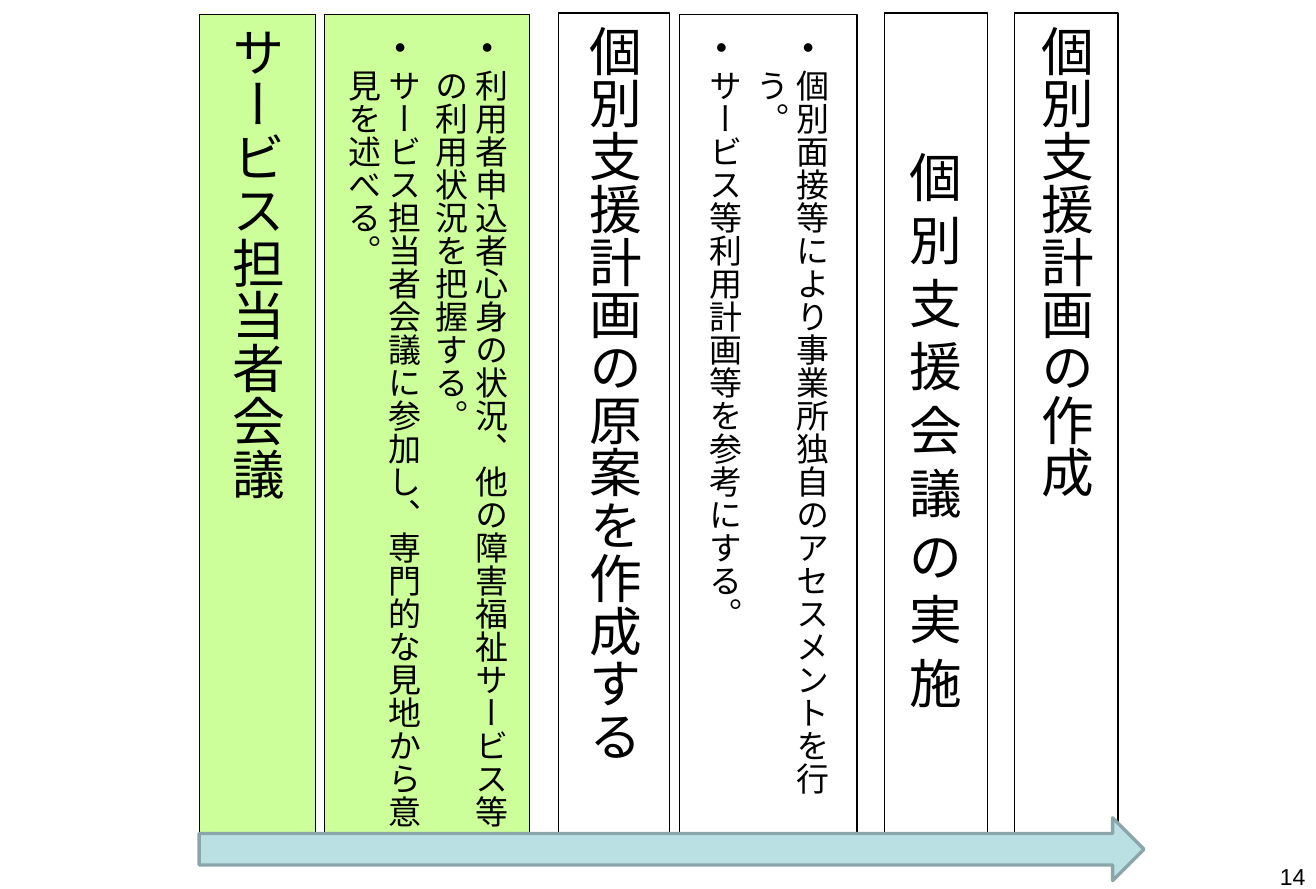
from pptx import Presentation
from pptx.dml.color import RGBColor
from pptx.enum.lang import MSO_LANGUAGE_ID
from pptx.enum.shapes import MSO_SHAPE
from pptx.enum.text import MSO_ANCHOR, PP_ALIGN
from pptx.oxml.xmlchemy import OxmlElement
from pptx.util import Inches, Pt

RECT, ARROW = MSO_SHAPE.RECTANGLE, MSO_SHAPE.RIGHT_ARROW
LEFT, CENTER, RIGHT = PP_ALIGN.LEFT, PP_ALIGN.CENTER, PP_ALIGN.RIGHT
TOP, MIDDLE = MSO_ANCHOR.TOP, MSO_ANCHOR.MIDDLE
JAPANESE = MSO_LANGUAGE_ID.JAPANESE

COLORS = {"text": "000000", "meeting": "CCFF99", "plan": "FFFFFF",
          "arrow": "BBE0E3", "arrow_edge": "8AA6A8"}

# Steps: left, top, width, fill, vertical writing, bulleted, paragraphs
# (\v marks a line break inside a paragraph)
STEPS = [
    (1.68, 0.12, 0.98, "meeting", True, False, ["サービス担当者会議"]),
    (2.74, 0.12, 1.73, "meeting", True, True,
     ["利用者申込者心身の状況、他の障害福祉サービス等の利用状況を把握する。",
      "サービス担当者会議に参加し、専門的な見地から意見を述べる。"]),
    (4.71, 0.11, 0.94, "plan", True, False, ["個別支援計画の原案を作成する"]),
    (5.73, 0.12, 1.5, "plan", True, True,
     ["個別面接等により事業所独自のアセスメントを行\vう。",
      "サービス等利用計画等を参考にする。"]),
    (7.46, 0.11, 0.87, "plan", False, False, ["個別支援会議の実施"]),
    (8.56, 0.11, 0.87, "plan", True, False, ["個別支援計画の作成"]),
]
STEP_HEIGHT = 7.02
FLOW_ARROW = (1.68, 6.9, 7.97, 0.53)
PAGE_NUMBER = "14"
PAGE_NUMBER_BOX = (8.52, 7.23, 2.59, 0.26)


def rgb(name):
    return RGBColor.from_string(COLORS[name])


def add_box(slide, preset, box, fill, line, line_width):
    shape = slide.shapes.add_shape(preset, *map(Inches, box))
    shape.shadow.inherit = False
    shape.fill.solid()
    shape.fill.fore_color.rgb = rgb(fill)
    shape.line.color.rgb = rgb(line)
    shape.line.width = Pt(line_width)
    return shape


def write(shape, paragraphs, size, align=LEFT, anchor=TOP,
          vertical=False, bulleted=False):
    frame = shape.text_frame
    frame.word_wrap = True
    frame.vertical_anchor = anchor
    frame.margin_left = frame.margin_right = Inches(0.1)
    frame.margin_top = frame.margin_bottom = Inches(0.05)
    if vertical:
        frame._txBody.bodyPr.set("vert", "eaVert")
    for index, text in enumerate(paragraphs):
        paragraph = frame.add_paragraph() if index else frame.paragraphs[0]
        paragraph.text = text
        paragraph.alignment = align
        for run in paragraph.runs:
            run.font.name = "Arial"
            run.font.size = Pt(size)
            run.font.color.rgb = rgb("text")
            run.font.language_id = JAPANESE
        if bulleted:
            paragraph.space_before = Pt(4.8)
            properties = paragraph._p.get_or_add_pPr()
            properties.set("marL", str(Inches(0.37)))
            properties.set("indent", str(Inches(-0.17)))
            bullet = OxmlElement("a:buChar")
            bullet.set("char", "•")
            properties.append(bullet)


prs = Presentation()
prs.slide_width, prs.slide_height = Inches(11.1), Inches(7.5)
slide = prs.slides.add_slide(prs.slide_layouts[6])

# Step columns
for left, top, width, fill, vertical, bulleted, paragraphs in STEPS:
    step = add_box(slide, RECT, (left, top, width, STEP_HEIGHT), fill, "text", 0.75)
    write(step, paragraphs, size=20 if bulleted else 32,
          align=LEFT if bulleted else CENTER, anchor=MIDDLE,
          vertical=vertical, bulleted=bulleted)

# Flow arrow along the bottom
add_box(slide, ARROW, FLOW_ARROW, "arrow", "arrow_edge", 2)

# Page number
page_number = slide.shapes.add_textbox(*map(Inches, PAGE_NUMBER_BOX))
write(page_number, [PAGE_NUMBER], size=14, align=RIGHT)

prs.save("out.pptx")
